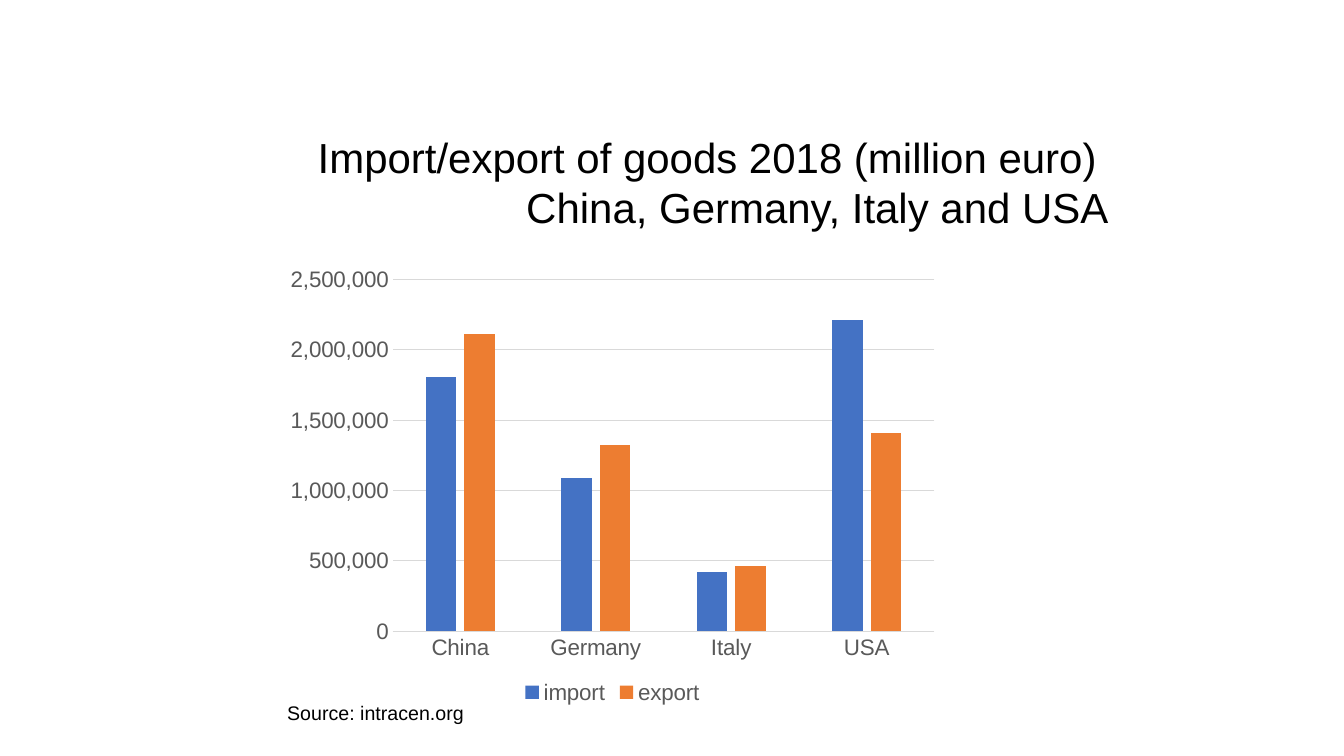
from dataclasses import dataclass

from pptx import Presentation
from pptx import util as u
from pptx.chart import data as chart_data
from pptx.dml import color
from pptx.enum import chart as chart_enum
from pptx.enum import text

EMU_PER_PX = 9080


@dataclass(frozen=True)
class Theme:
    font: str = "Arial"
    ink: str = "000000"
    label: str = "595959"
    rule: str = "D9D9D9"
    import_bar: str = "4472C4"
    export_bar: str = "ED7D31"
    title_size: int = 30
    chart_size: int = 16
    source_size: int = 14


THEME = Theme()

COUNTRIES = ("China", "Germany", "Italy", "USA")
TRADE = (
    ("import", (1810000, 1090000, 420000, 2210000), THEME.import_bar),
    ("export", (2110000, 1320000, 460000, 1410000), THEME.export_bar),
)


def px(length):
    return u.Emu(length * EMU_PER_PX)


def rgb(value):
    return color.RGBColor.from_string(value)


def style_font(font, size, ink):
    font.name = THEME.font
    font.size = u.Pt(size)
    font.color.rgb = rgb(ink)


def style_line(line):
    line.color.rgb = rgb(THEME.rule)
    line.width = u.Pt(0.75)


def add_text(slide, box, lines, size, alignment=text.PP_ALIGN.LEFT):
    frame = slide.shapes.add_textbox(*map(px, box)).text_frame
    frame.word_wrap = True
    frame.auto_size = text.MSO_AUTO_SIZE.SHAPE_TO_FIT_TEXT
    paragraph = frame.paragraphs[0]
    paragraph.alignment = alignment
    for index, line in enumerate(lines):
        if index:
            paragraph.add_line_break()
        run = paragraph.add_run()
        run.text = line
        style_font(run.font, size, THEME.ink)


def style_axes(chart):
    for axis in (chart.category_axis, chart.value_axis):
        axis.major_tick_mark = chart_enum.XL_TICK_MARK.NONE
        axis.minor_tick_mark = chart_enum.XL_TICK_MARK.NONE
        style_font(axis.tick_labels.font, THEME.chart_size, THEME.label)
    style_line(chart.category_axis.format.line)
    values = chart.value_axis
    values.format.line.fill.background()
    values.has_major_gridlines = True
    style_line(values.major_gridlines.format.line)
    values.minimum_scale = 0
    values.maximum_scale = 2500000
    values.major_unit = 500000
    values.tick_labels.number_format = "#,##0"
    values.tick_labels.number_format_is_linked = False


def add_trade_chart(slide, box):
    trade = chart_data.CategoryChartData(number_format="#,##0")
    trade.categories = COUNTRIES
    for name, values, _ in TRADE:
        trade.add_series(name, values)
    chart = slide.shapes.add_chart(
        chart_enum.XL_CHART_TYPE.COLUMN_CLUSTERED, *map(px, box), trade
    ).chart
    chart.has_title = False
    style_font(chart.font, THEME.chart_size, THEME.label)
    style_axes(chart)

    plot = chart.plots[0]
    plot.gap_width = 219
    plot.overlap = -27
    plot.vary_by_categories = False
    for series, (_, _, fill) in zip(plot.series, TRADE):
        series.format.fill.solid()
        series.format.fill.fore_color.rgb = rgb(fill)

    chart.has_legend = True
    chart.legend.position = chart_enum.XL_LEGEND_POSITION.BOTTOM
    chart.legend.include_in_layout = False
    style_font(chart.legend.font, THEME.chart_size, THEME.label)


def main():
    presentation = Presentation()
    presentation.slide_width = px(1343)
    presentation.slide_height = px(755)
    slide = presentation.slides.add_slide(presentation.slide_layouts[6])
    add_trade_chart(slide, (277, 258, 670, 450))
    add_text(slide, (277, 695, 218, 34), ["Source: intracen.org"], THEME.source_size)
    add_text(
        slide,
        (277, 126, 841, 112),
        ["Import/export of goods 2018 (million euro) ", "China, Germany, Italy and USA"],
        THEME.title_size,
        text.PP_ALIGN.RIGHT,
    )
    presentation.save("out.pptx")


if __name__ == "__main__":
    main()
